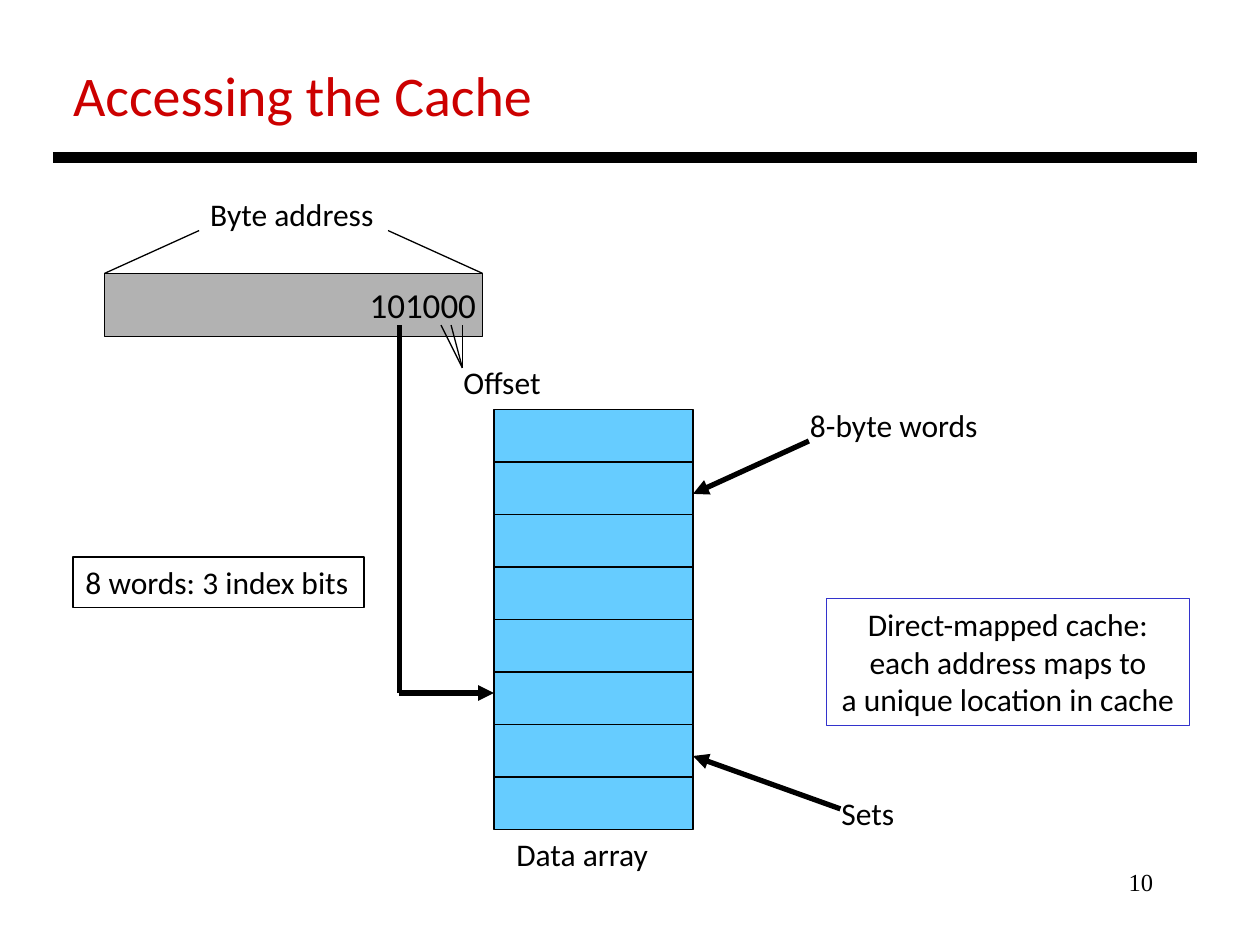
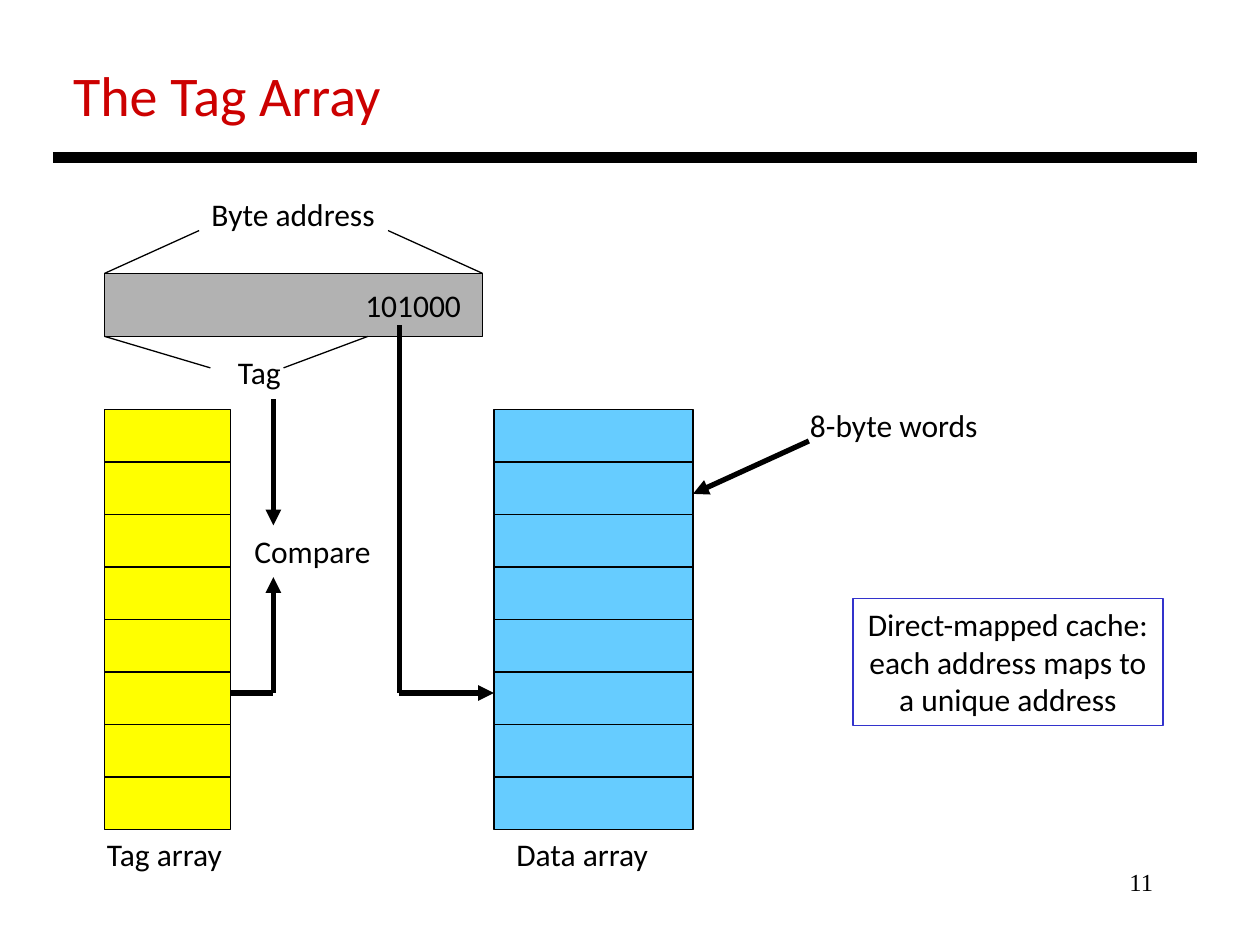
import pptx
import pptx.dml.color
import pptx.enum.shapes
import pptx.enum.text
import pptx.oxml.ns
import pptx.oxml.xmlchemy
import pptx.util

Inches = pptx.util.Inches
ALIGN = pptx.enum.text.PP_ALIGN
ANCHOR = pptx.enum.text.MSO_ANCHOR

COLOURS = {
    "title": "CC0000",
    "ink": "000000",
    "address": "B2B2B2",
    "data": "66CCFF",
    "tag": "FFFF00",
    "note": "3333CC",
}
BODY_FONT = "Calibri"
NUMBER_FONT = "Times New Roman"
THIN, THICK, RULE = 0.75, 3, 6
ARRAY_TOP = 3.25
ROW_COUNT = 8
ROW_HEIGHT = 5 / 12
LABEL_HEIGHT = 0.4
ADDRESS_LEFT, ADDRESS_RIGHT = 0.83, 3.83
ADDRESS_TOP, ADDRESS_BOTTOM = 2.17, 2.67
DATA_LEFT, DATA_WIDTH = 3.92, 1.58
TAG_WIDTH = 1
INDEX_X, INDEXED_ROW_Y = 3.17, 5.5


def colour(name):
    return pptx.dml.color.RGBColor.from_string(COLOURS[name])


def write(shape, lines, size=18, ink="ink", font=BODY_FONT, align=ALIGN.LEFT,
          anchor=ANCHOR.TOP):
    frame = shape.text_frame
    frame.word_wrap = False
    frame.auto_size = pptx.enum.text.MSO_AUTO_SIZE.NONE
    frame.vertical_anchor = anchor
    for index, line in enumerate(lines):
        para = frame.add_paragraph() if index else frame.paragraphs[0]
        para.alignment = align
        span = para.add_run()
        span.text = line
        span.font.name = font
        span.font.size = pptx.util.Pt(size)
        span.font.color.rgb = colour(ink)


def add_label(page, left, top, width, text):
    box = page.shapes.add_textbox(
        Inches(left), Inches(top), Inches(width), Inches(LABEL_HEIGHT))
    write(box, [text])


def add_box(page, left, top, width, height, fill=None, outline="ink"):
    box = page.shapes.add_shape(
        pptx.enum.shapes.MSO_SHAPE.RECTANGLE,
        Inches(left), Inches(top), Inches(width), Inches(height))
    box.shadow.inherit = False
    if fill:
        box.fill.solid()
        box.fill.fore_color.rgb = colour(fill)
    else:
        box.fill.background()
    box.line.color.rgb = colour(outline)
    box.line.width = pptx.util.Pt(THIN)
    return box


def add_line(page, start, end, weight=THIN, arrow=False):
    line = page.shapes.add_connector(
        pptx.enum.shapes.MSO_CONNECTOR.STRAIGHT,
        Inches(start[0]), Inches(start[1]), Inches(end[0]), Inches(end[1]))
    line.line.color.rgb = colour("ink")
    line.line.width = pptx.util.Pt(weight)
    properties = line._element.spPr
    if arrow:
        outline = properties.find(pptx.oxml.ns.qn("a:ln"))
        tip = pptx.oxml.xmlchemy.OxmlElement("a:tailEnd")
        tip.set("type", "triangle")
        outline.append(tip)
    properties.append(pptx.oxml.xmlchemy.OxmlElement("a:effectLst"))


def add_array(page, left, width, fill):
    for row in range(ROW_COUNT):
        add_box(page, left, ARRAY_TOP + row * ROW_HEIGHT, width, ROW_HEIGHT, fill)


def add_address(page, label_left, size, right_inset):
    add_label(page, label_left, 1.5, 1.51, "Byte address")
    add_line(page, (1.58, 1.83), (ADDRESS_LEFT, ADDRESS_TOP))
    add_line(page, (3.08, 1.83), (ADDRESS_RIGHT, ADDRESS_TOP))
    box = add_box(page, ADDRESS_LEFT, ADDRESS_TOP, ADDRESS_RIGHT - ADDRESS_LEFT,
                  ADDRESS_BOTTOM - ADDRESS_TOP, "address")
    write(box, ["101000"], size, align=ALIGN.RIGHT, anchor=ANCHOR.MIDDLE)
    box.text_frame.word_wrap = True
    box.text_frame.margin_right = Inches(right_inset)


def add_data_array(page):
    add_array(page, DATA_LEFT, DATA_WIDTH, "data")
    add_label(page, 4, 6.58, 1.26, "Data array")
    add_label(page, 6.33, 3.17, 1.55, "8-byte words")
    add_line(page, (6.42, 3.5), (DATA_LEFT + DATA_WIDTH, 3.92), THICK, arrow=True)
    add_line(page, (INDEX_X, 2.58), (INDEX_X, INDEXED_ROW_Y), THICK)
    add_line(page, (INDEX_X, INDEXED_ROW_Y), (DATA_LEFT, INDEXED_ROW_Y), THICK,
             arrow=True)


def add_mapping_note(page, left, width, last_line):
    box = add_box(page, left, 4.75, width, 1.01, outline="note")
    write(box, ["Direct-mapped cache:", "each address maps to", last_line],
          align=ALIGN.CENTER)


def add_page(deck, title, title_width, number):
    page = deck.slides.add_slide(deck.slide_layouts[5])
    heading = page.shapes.title
    heading.left, heading.top = Inches(0.48), Inches(0.43)
    heading.width, heading.height = Inches(title_width), Inches(0.64)
    write(heading, [title], 32, "title")
    add_line(page, (0.42, 1.25), (9.5, 1.25), RULE)
    box = page.shapes.add_textbox(
        Inches(7.17), Inches(6.83), Inches(2.08), Inches(0.5))
    write(box, [str(number)], 14, font=NUMBER_FONT, align=ALIGN.RIGHT)
    box.text_frame.word_wrap = True
    return page


def build_access_page(deck):
    page = add_page(deck, "Accessing the Cache", 3.88, 10)
    add_address(page, 1.57, 20, 0.05)
    add_data_array(page)
    add_mapping_note(page, 6.56, 2.88, "a unique location in cache")
    write(add_box(page, 0.58, 4.42, 2.31, LABEL_HEIGHT), ["8 words: 3 index bits"])
    add_label(page, 6.58, 6.25, 0.62, "Sets")
    add_line(page, (6.67, 6.42), (DATA_LEFT + DATA_WIDTH, 6), THICK, arrow=True)
    for bit_x in (3.5, 3.58, 3.67):
        add_line(page, (bit_x, 2.58), (3.67, 2.92))
    add_label(page, 3.58, 2.83, 0.82, "Offset")


def build_tag_page(deck):
    page = add_page(deck, "The Tag Array", 2.67, 11)
    add_address(page, 1.58, 18, 0.17)
    add_data_array(page)
    add_mapping_note(page, 6.77, 2.46, "a unique address")
    add_array(page, ADDRESS_LEFT, TAG_WIDTH, "tag")
    add_label(page, 0.75, 6.58, 1.12, "Tag array")
    add_label(page, 1.79, 2.75, 0.55, "Tag")
    add_line(page, (2.25, 2.92), (2.92, ADDRESS_BOTTOM))
    add_line(page, (ADDRESS_LEFT, ADDRESS_BOTTOM), (1.67, 2.92))
    compare_x = 2.17
    add_line(page, (ADDRESS_LEFT + TAG_WIDTH, INDEXED_ROW_Y),
             (compare_x, INDEXED_ROW_Y), THICK)
    add_line(page, (compare_x, 3.17), (compare_x, 4.17), THICK, arrow=True)
    add_line(page, (compare_x, INDEXED_ROW_Y), (compare_x, 4.58), THICK, arrow=True)
    add_label(page, 1.92, 4.17, 1.14, "Compare")


def main():
    deck = pptx.Presentation()
    deck.slide_width, deck.slide_height = Inches(10), Inches(7.5)
    build_access_page(deck)
    build_tag_page(deck)
    deck.save("out.pptx")


if __name__ == "__main__":
    main()
